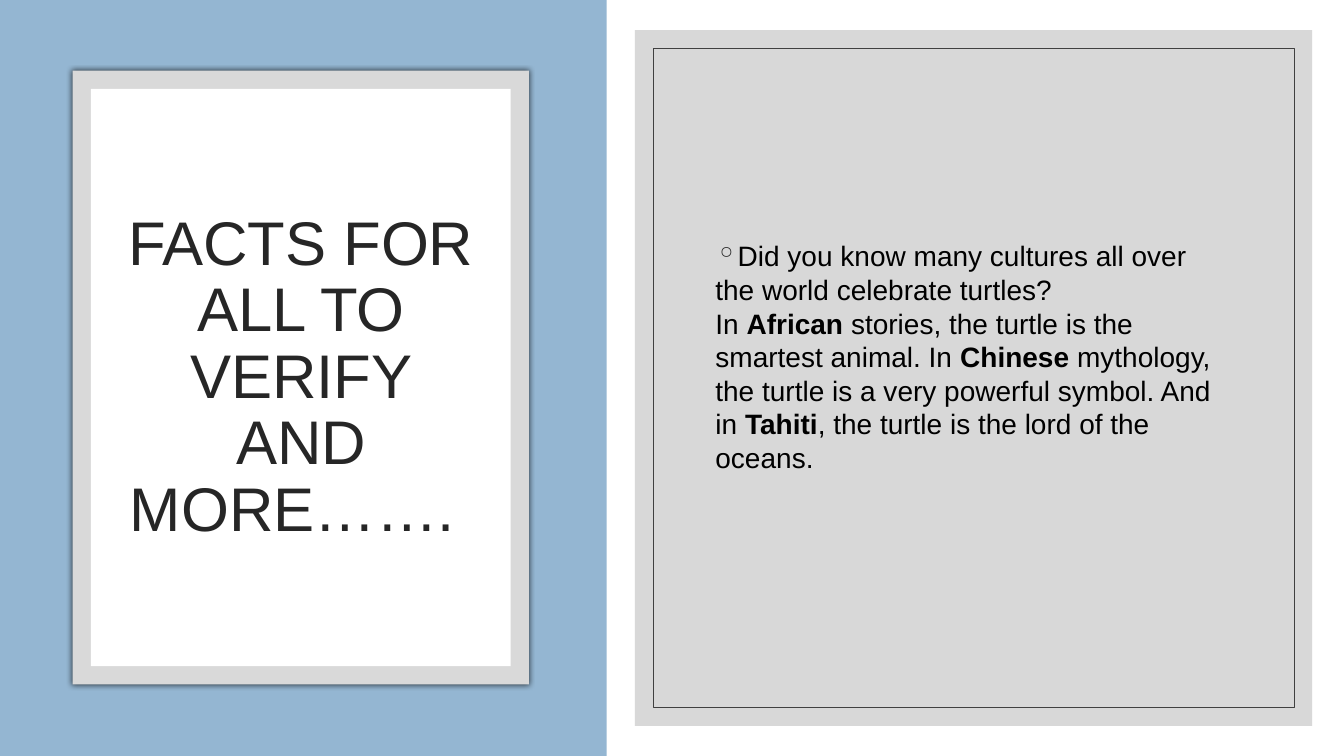
from dataclasses import dataclass
from typing import Optional

from lxml.etree import SubElement
from pptx import Presentation
from pptx.dml.color import RGBColor
from pptx.enum.shapes import MSO_SHAPE
from pptx.enum.text import MSO_ANCHOR, PP_ALIGN
from pptx.oxml.ns import qn
from pptx.util import Cm, Pt

WHITE = RGBColor(0xFF, 0xFF, 0xFF)
BLUE = RGBColor(0x94, 0xB6, 0xD2)
LIGHT_GRAY = RGBColor(0xD9, 0xD9, 0xD9)
PANEL_GRAY = RGBColor(0xBF, 0xBF, 0xBF)
OUTLINE_GRAY = RGBColor(0x40, 0x40, 0x40)
TITLE_GRAY = RGBColor(0x26, 0x26, 0x26)
BLACK = RGBColor(0, 0, 0)
FONT = "Arial"
BREAK = "\n"


@dataclass
class Panel:
    left: float
    top: float
    width: float
    height: float
    fill: Optional[RGBColor] = None
    line: Optional[RGBColor] = None
    opacity: int = 100
    shadow: bool = False


@dataclass
class Span:
    text: str
    bold: bool = False


PANELS = [
    Panel(0, 0, 33.87, 19.05, WHITE),
    Panel(-0.02, 0, 15.31, 19.05, BLUE),
    Panel(1.83, 1.78, 11.5, 15.47, LIGHT_GRAY, shadow=True),
    Panel(2.29, 2.24, 10.58, 14.55, WHITE),
    Panel(16, 0.76, 17.07, 17.53, PANEL_GRAY, opacity=60),
    Panel(16.46, 1.22, 16.15, 16.61, line=OUTLINE_GRAY),
]

TITLE = [Span("FACTS FOR ALL TO VERIFY AND MORE……. ")]
BODY = [
    Span("Did you know many cultures all over the world celebrate turtles?"),
    Span(BREAK),
    Span("In "),
    Span("African ", bold=True),
    Span("stories, the turtle is the smartest animal. In "),
    Span("Chinese", bold=True),
    Span(" mythology, the turtle is a very powerful symbol. And in "),
    Span("Tahiti", bold=True),
    Span(", the turtle is the lord of the oceans."),
]


def add_panel(page, panel: Panel) -> None:
    box = page.shapes.add_shape(
        MSO_SHAPE.RECTANGLE,
        Cm(panel.left), Cm(panel.top), Cm(panel.width), Cm(panel.height),
    )
    box.shadow.inherit = False
    if panel.fill is None:
        box.fill.background()
    else:
        box.fill.solid()
        box.fill.fore_color.rgb = panel.fill
    if panel.line is None:
        box.line.fill.background()
    else:
        box.line.color.rgb = panel.line
        box.line.width = Pt(0.5)
    properties = box.element.spPr
    if panel.opacity < 100:
        color = properties.find(qn("a:solidFill"))[0]
        SubElement(color, qn("a:alpha"), val=str(panel.opacity * 1000))
    if panel.shadow:
        effects = properties.find(qn("a:effectLst"))
        shadow = SubElement(effects, qn("a:outerShdw"), blurRad=str(Pt(4)),
                            dist="0", dir="0", algn="ctr", rotWithShape="0")
        color = SubElement(shadow, qn("a:srgbClr"), val=str(BLACK))
        SubElement(color, qn("a:alpha"), val="66000")


def add_bullet(para, symbol: str, color: RGBColor) -> None:
    properties = para._p.get_or_add_pPr()
    properties.set("marL", "0")
    properties.set("indent", str(Cm(-0.51)))
    bullet_color = SubElement(properties, qn("a:buClr"))
    SubElement(bullet_color, qn("a:srgbClr"), val=str(color))
    SubElement(properties, qn("a:buChar"), char=symbol)


def add_text(page, spans: list[Span], *, left: float, top: float,
             width: float, height: float, size: float, color: RGBColor,
             align: PP_ALIGN = PP_ALIGN.LEFT, spacing: float = 1.0,
             bottom: float = 0.13, bullet: str = "") -> None:
    box = page.shapes.add_textbox(Cm(left), Cm(top), Cm(width), Cm(height))
    frame = box.text_frame
    frame.word_wrap = True
    frame.vertical_anchor = MSO_ANCHOR.MIDDLE
    frame.margin_bottom = Cm(bottom)
    para = frame.paragraphs[0]
    para.alignment = align
    para.line_spacing = spacing
    if bullet:
        add_bullet(para, bullet, TITLE_GRAY)
    for span in spans:
        if span.text == BREAK:
            para.add_line_break()
            continue
        run = para.add_run()
        run.text = span.text
        run.font.name = FONT
        run.font.size = Pt(size)
        run.font.bold = span.bold
        run.font.color.rgb = color


def main() -> None:
    deck = Presentation()
    deck.slide_width = Cm(33.87)
    deck.slide_height = Cm(19.05)
    page = deck.slides.add_slide(deck.slide_layouts[6])
    for panel in PANELS:
        add_panel(page, panel)
    add_text(page, TITLE, left=2.74, top=3.3, width=9.7, height=12.47,
             size=44, color=TITLE_GRAY, align=PP_ALIGN.CENTER, spacing=0.9)
    add_text(page, BODY, left=17.78, top=2.59, width=13.54, height=13.84,
             size=20, color=BLACK, bottom=1.18, bullet="◦")
    deck.save("out.pptx")


if __name__ == "__main__":
    main()
